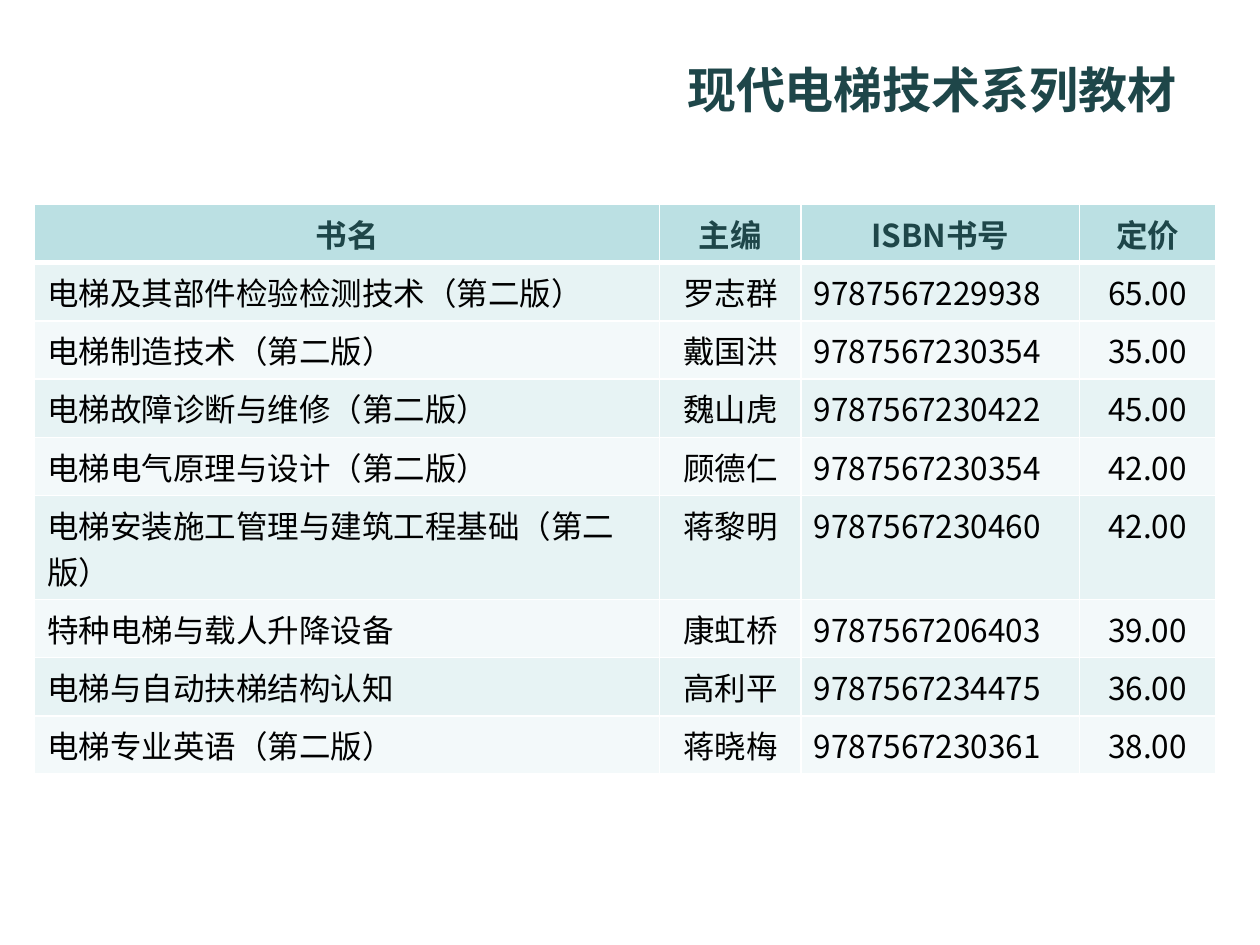
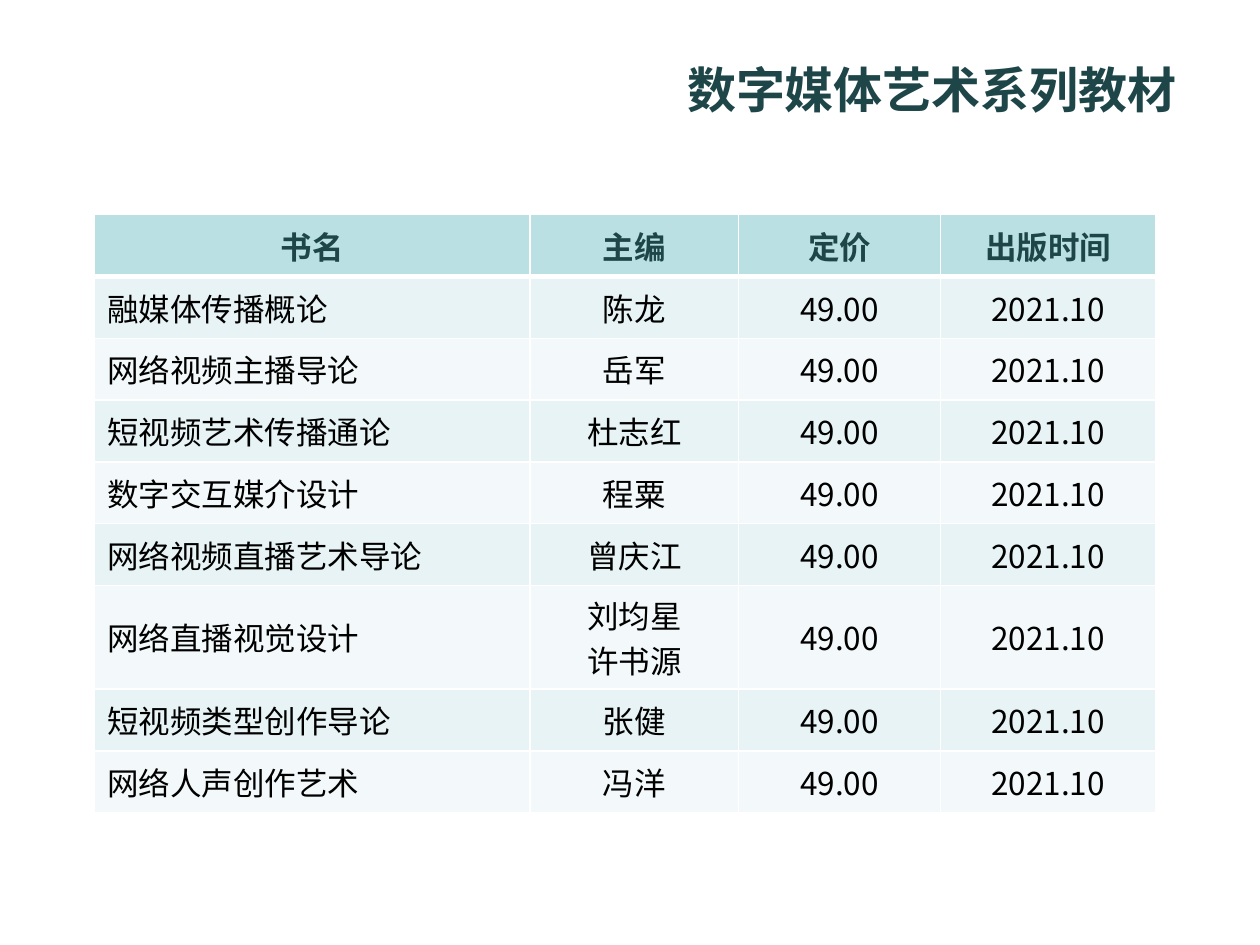
from lxml import etree
from pptx import Presentation
from pptx.dml.color import RGBColor
from pptx.enum import text
from pptx.oxml import ns
from pptx.util import Pt

FONT = "Noto Sans CJK SC"
COLOURS = {
    "heading": "1E4649",
    "body": "000000",
    "header": "BBE0E3",
    "odd": "E7F3F4",
    "even": "F3F9FA",
    "border": "FFFFFF",
}
TITLE_BOX = (296.64, 26.2, 471.6, 49.68)
TWO_LINE_HEIGHT = 59.3
LEFT, CENTRE = text.PP_ALIGN.LEFT, text.PP_ALIGN.CENTER
TOP, MIDDLE = text.MSO_ANCHOR.TOP, text.MSO_ANCHOR.MIDDLE

ELEVATOR_BOOKS = [
    ("书名", "主编", "ISBN书号", "定价"),
    ("电梯及其部件检验检测技术（第二版）", "罗志群", "9787567229938", "65.00"),
    ("电梯制造技术（第二版）", "戴国洪", "9787567230354", "35.00"),
    ("电梯故障诊断与维修（第二版）", "魏山虎", "9787567230422", "45.00"),
    ("电梯电气原理与设计（第二版）", "顾德仁", "9787567230354", "42.00"),
    ("电梯安装施工管理与建筑工程基础（第二版）", "蒋黎明", "9787567230460", "42.00"),
    ("特种电梯与载人升降设备", "康虹桥", "9787567206403", "39.00"),
    ("电梯与自动扶梯结构认知", "高利平", "9787567234475", "36.00"),
    ("电梯专业英语（第二版）", "蒋晓梅", "9787567230361", "38.00"),
]
MEDIA_AUTHORS = [
    ("融媒体传播概论", "陈龙"),
    ("网络视频主播导论", "岳军"),
    ("短视频艺术传播通论", "杜志红"),
    ("数字交互媒介设计", "程粟"),
    ("网络视频直播艺术导论", "曾庆江"),
    ("网络直播视觉设计", "刘均星\n许书源"),
    ("短视频类型创作导论", "张健"),
    ("网络人声创作艺术", "冯洋"),
]
MEDIA_BOOKS = [("书名", "主编", "定价", "出版时间")] + [
    (*book, "49.00", "2021.10") for book in MEDIA_AUTHORS
]


def rgb(name):
    return RGBColor.from_string(COLOURS[name])


def style_paragraph(paragraph, size, colour, bold, alignment):
    paragraph.alignment = alignment
    font = paragraph.font
    font.size, font.bold, font.name = Pt(size), bold, FONT
    font.color.rgb = rgb(colour)
    properties = paragraph._p.pPr.find(ns.qn("a:defRPr"))
    etree.SubElement(properties, ns.qn("a:ea"), typeface=FONT)


def set_borders(cell, top, bottom):
    """Draw the four cell borders; side lines are one point wide."""
    properties = cell._tc.get_or_add_tcPr()
    widths = {"lnL": 1, "lnR": 1, "lnT": top, "lnB": bottom}
    for index, (side, width) in enumerate(widths.items()):
        line = etree.Element(ns.qn(f"a:{side}"), w=str(Pt(width)))
        fill = etree.SubElement(line, ns.qn("a:solidFill"))
        etree.SubElement(fill, ns.qn("a:srgbClr"), val=COLOURS["border"])
        properties.insert(index, line)


def add_title(slide, title, box):
    frame = slide.shapes.add_textbox(*map(Pt, box)).text_frame
    frame.word_wrap = True
    frame.vertical_anchor = MIDDLE
    frame.text = title
    style_paragraph(frame.paragraphs[0], 28, "heading", True, CENTRE)


def fill_cell(cell, content, row, alignment, anchor):
    is_header = row == 0
    cell.text = content
    cell.vertical_anchor = anchor
    cell.fill.solid()
    cell.fill.fore_color.rgb = rgb("header" if is_header else "odd" if row % 2 else "even")
    set_borders(cell, top=3 if row == 1 else 1, bottom=3 if is_header else 1)
    for paragraph in cell.text_frame.paragraphs:
        style_paragraph(paragraph, 18, "heading" if is_header else "body",
                        is_header, CENTRE if is_header else alignment)


def add_book_table(slide, books, left, top, widths, row_height, two_line_row,
                   alignments, anchor):
    heights = [row_height] * len(books)
    heights[two_line_row] = TWO_LINE_HEIGHT
    table = slide.shapes.add_table(
        len(books), len(widths), Pt(left), Pt(top),
        Pt(sum(widths)), Pt(sum(heights))).table
    table.first_row = table.horz_banding = False
    for column, width in zip(table.columns, widths):
        column.width = Pt(width)
    for row, (book, height) in enumerate(zip(books, heights)):
        table.rows[row].height = Pt(height)
        for column, content in enumerate(book):
            fill_cell(table.cell(row, column), content, row, alignments[column], anchor)


def add_series_slide(presentation, title, books, **layout):
    slide = presentation.slides.add_slide(presentation.slide_layouts[6])
    add_title(slide, title, TITLE_BOX)
    add_book_table(slide, books, **layout)


def main():
    presentation = Presentation()
    presentation.slide_width, presentation.slide_height = Pt(720), Pt(540)
    add_series_slide(
        presentation, "现代电梯技术系列教材", ELEVATOR_BOOKS,
        left=19.8, top=116.8, widths=(357, 81, 159, 78), row_height=33.3,
        two_line_row=5, alignments=(LEFT, CENTRE, LEFT, CENTRE), anchor=TOP)
    add_series_slide(
        presentation, "数字媒体艺术系列教材", MEDIA_BOOKS,
        left=54, top=122.7, widths=(249, 119, 115.5, 123), row_height=35.3,
        two_line_row=6, alignments=(LEFT, CENTRE, CENTRE, CENTRE), anchor=MIDDLE)
    presentation.save("out.pptx")


if __name__ == "__main__":
    main()
